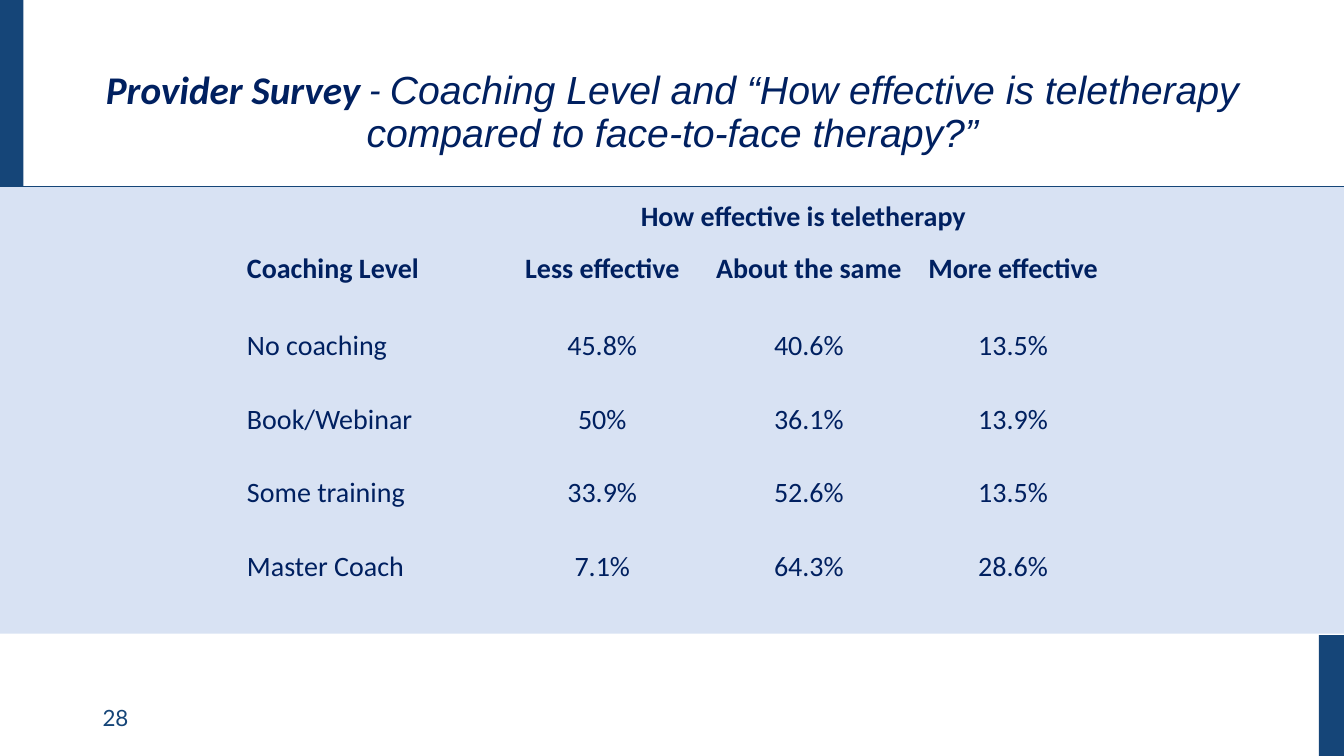
"""Build the provider survey slide on coaching level and teletherapy."""
import lxml.etree
import pptx
import pptx.dml.color
import pptx.enum.shapes
import pptx.enum.text
import pptx.oxml.ns
import pptx.util

Pt = pptx.util.Pt
ALIGN = pptx.enum.text.PP_ALIGN
ANCHOR = pptx.enum.text.MSO_ANCHOR
SHAPE = pptx.enum.shapes.MSO_SHAPE
qualified = pptx.oxml.ns.qn

COLOURS = {"navy": "002060", "blue": "154578", "pale": "D8E2F3"}

TITLE = [
    ("Provider Survey", {"name": "Calibri", "bold": True}),
    (" - ", {"name": "Calibri", "bold": False}),
    ("Coaching Level and “How effective is teletherapy compared to face-to-face therapy?”",
     {"name": "Arial", "bold": False}),
]
TABLE_HEADING = "How effective is teletherapy"
PAGE_NUMBER = "28"
SURVEY = [
    ("Coaching Level", "Less effective", "About the same", "More effective"),
    ("No coaching", "45.8%", "40.6%", "13.5%"),
    ("Book/Webinar", "50%", "36.1%", "13.9%"),
    ("Some training", "33.9%", "52.6%", "13.5%"),
    ("Master Coach", "7.1%", "64.3%", "28.6%"),
]

PAGE_WIDTH, PAGE_HEIGHT = 960, 540
RULE_TOP = 133.2
STRIPE_WIDTH = 18
RIGHT_STRIPE_HEIGHT = 86.4
BANDS = [
    ("pale", 0, RULE_TOP, PAGE_WIDTH, 319.5),
    ("blue", 0, 0, 16.8, RULE_TOP),
    ("blue", PAGE_WIDTH - STRIPE_WIDTH, PAGE_HEIGHT - RIGHT_STRIPE_HEIGHT,
     STRIPE_WIDTH, RIGHT_STRIPE_HEIGHT),
]
TABLE_LEFT, TABLE_TOP = 169.2, 169.2
COLUMN_WIDTHS = [190.8, 140.4, 154.8, 136.8]
HEADER_HEIGHT, ROW_HEIGHT = 54.9, 52.6
CELL_MARGIN = 7.2
TABLE_FONT = {"name": "Calibri", "size": Pt(20)}


def colour(name):
    return pptx.dml.color.RGBColor.from_string(COLOURS[name])


def apply(target, values):
    for name, value in values.items():
        setattr(target, name, value)


def add_span(para, text, tint, font):
    span = para.add_run()
    span.text = text
    apply(span.font, font)
    span.font.color.rgb = colour(tint)


def add_box(page, area, spans, tint, frame_format, para_format):
    box = page.shapes.add_textbox(*map(Pt, area))
    apply(box.text_frame, {"word_wrap": True, **frame_format})
    para = box.text_frame.paragraphs[0]
    apply(para, para_format)
    for text, font in spans:
        add_span(para, text, tint, font)


def add_bands(page):
    for tint, *area in BANDS:
        band = page.shapes.add_shape(SHAPE.RECTANGLE, *map(Pt, area))
        band.shadow.inherit = False
        band.fill.solid()
        band.fill.fore_color.rgb = colour(tint)
        band.line.fill.background()
    rule = page.shapes.add_connector(
        pptx.enum.shapes.MSO_CONNECTOR.STRAIGHT,
        Pt(0), Pt(RULE_TOP), Pt(PAGE_WIDTH), Pt(RULE_TOP))
    rule.line.color.rgb = colour("blue")
    rule.line.width = Pt(0.75)
    lxml.etree.SubElement(rule._element.spPr, qualified("a:effectLst"))


def clear_borders(cell):
    properties = cell._tc.get_or_add_tcPr()
    for position, side in enumerate(("lnL", "lnR", "lnT", "lnB")):
        border = lxml.etree.Element(qualified("a:" + side))
        lxml.etree.SubElement(border, qualified("a:noFill"))
        properties.insert(position, border)


def add_survey_table(page):
    heights = [HEADER_HEIGHT] + [ROW_HEIGHT] * (len(SURVEY) - 1)
    table = page.shapes.add_table(
        len(SURVEY), len(COLUMN_WIDTHS), Pt(TABLE_LEFT), Pt(TABLE_TOP),
        Pt(sum(COLUMN_WIDTHS)), Pt(sum(heights))).table
    apply(table, {"first_row": False, "horz_banding": False})
    for column, width in zip(table.columns, COLUMN_WIDTHS):
        column.width = Pt(width)
    for row, height in zip(table.rows, heights):
        row.height = Pt(height)
    margins = {"margin_" + side: Pt(CELL_MARGIN)
               for side in ("left", "right", "top", "bottom")}
    for row_index, row in enumerate(SURVEY):
        for column_index, text in enumerate(row):
            cell = table.cell(row_index, column_index)
            apply(cell, margins)
            cell.fill.background()
            clear_borders(cell)
            para = cell.text_frame.paragraphs[0]
            apply(para, {"alignment": ALIGN.CENTER if column_index else ALIGN.LEFT,
                         "line_spacing": 1.15})
            add_span(para, text, "navy", {**TABLE_FONT, "bold": row_index == 0})


def main():
    deck = pptx.Presentation()
    apply(deck, {"slide_width": Pt(PAGE_WIDTH), "slide_height": Pt(PAGE_HEIGHT)})
    page = deck.slides.add_slide(deck.slide_layouts[6])
    middle = {"vertical_anchor": ANCHOR.MIDDLE}
    add_bands(page)
    add_box(page, (66.2, 498.2, 216, 28.8),
            [(PAGE_NUMBER, {"name": "Lato", "size": Pt(16)})],
            "blue", middle, {"alignment": ALIGN.LEFT})
    add_box(page, (66.2, 28.8, 828, 104.4),
            [(text, {"size": Pt(28), "italic": True, **font}) for text, font in TITLE],
            "navy", middle, {"alignment": ALIGN.CENTER, "line_spacing": 0.9})
    add_box(page, (357.1, 134.6, 433.4, 34.6),
            [(TABLE_HEADING, {**TABLE_FONT, "bold": True})],
            "navy", {"vertical_anchor": ANCHOR.TOP},
            {"alignment": ALIGN.CENTER, "line_spacing": 1.15})
    add_survey_table(page)
    deck.save("out.pptx")


if __name__ == "__main__":
    main()
